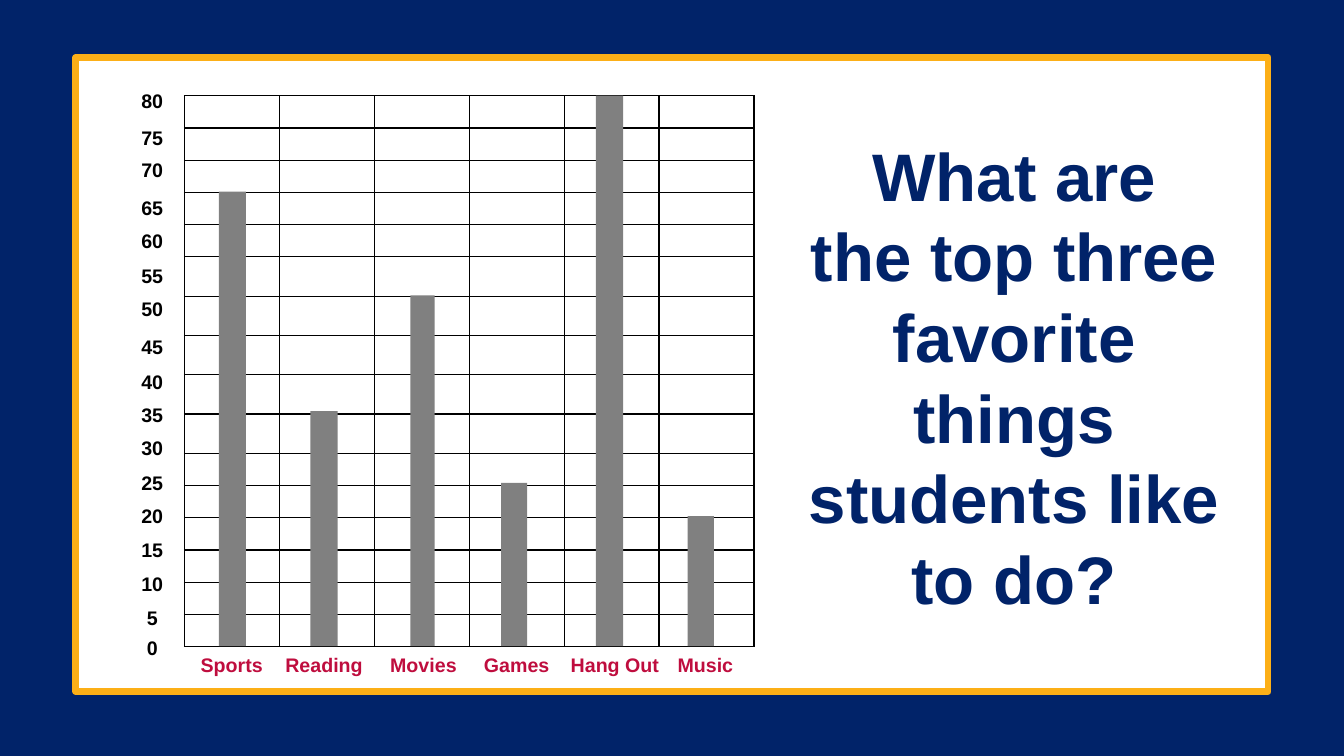
"""Build a slide with a survey bar graph and a question about it."""
from pptx import Presentation
from pptx.dml.color import RGBColor
from pptx.enum.shapes import MSO_SHAPE
from pptx.enum.text import MSO_ANCHOR, MSO_AUTO_SIZE, PP_ALIGN
from pptx.oxml.ns import qn
from pptx.util import Inches, Pt
from lxml import etree

RECTANGLE = MSO_SHAPE.RECTANGLE
TOP = MSO_ANCHOR.TOP
NO_AUTOFIT = MSO_AUTO_SIZE.NONE
CENTER = PP_ALIGN.CENTER
NAVY, GOLD, WHITE = "012369", "FCAF17", "FFFFFF"
BLACK, GRAY, CRIMSON = "000000", "808080", "BF0D3E"


def color(hex_string):
    return RGBColor.from_string(hex_string)


def format_text(text_frame, size, font_color, margin):
    text_frame.word_wrap = True
    text_frame.auto_size = NO_AUTOFIT
    text_frame.vertical_anchor = TOP
    text_frame.margin_left = text_frame.margin_right = Inches(margin)
    text_frame.margin_top = text_frame.margin_bottom = Inches(0.04)
    for paragraph in text_frame.paragraphs:
        for run in paragraph.runs:
            run.font.name = "Arial"
            run.font.size = Pt(size)
            run.font.bold = True
            run.font.color.rgb = color(font_color)


presentation = Presentation()
presentation.slide_width = Inches(13.33)
presentation.slide_height = Inches(7.5)
slide = presentation.slides.add_slide(presentation.slide_layouts[5])
slide.background.fill.solid()
slide.background.fill.fore_color.rgb = color(NAVY)
shapes = slide.shapes
question = shapes.title

panel = shapes.add_shape(RECTANGLE, Inches(0.75), Inches(0.57), Inches(11.83), Inches(6.29))
panel.shadow.inherit = False
panel.fill.solid()
panel.fill.fore_color.rgb = color(WHITE)
panel.line.color.rgb = color(GOLD)
panel.line.width = Pt(4.5)
shapes._spTree.remove(question._element)
shapes._spTree.append(question._element)

row_heights = [0.32] * 5 + [0.39] * 5 + [0.32] * 6
grid_frame = shapes.add_table(
    len(row_heights), 6, Inches(1.83), Inches(0.95), Inches(5.65), Inches(5.46))
grid = grid_frame.table
grid.first_row = False
grid.horz_banding = False
for row, height in zip(grid.rows, row_heights):
    row.height = Inches(height)
    for cell in row.cells:
        cell.margin_left = cell.margin_right = 0
        cell.margin_top = cell.margin_bottom = 0
        properties = cell._tc.get_or_add_tcPr()
        for side in ("a:lnL", "a:lnR", "a:lnT", "a:lnB"):
            border = etree.SubElement(properties, qn(side), w=str(Pt(1)))
            border_fill = etree.SubElement(border, qn("a:solidFill"))
            etree.SubElement(border_fill, qn("a:srgbClr"), val=BLACK)
        cell.fill.background()

baseline = 6.41
bars = [
    (2.17, 0.27, 4.51),
    (3.08, 0.27, 2.33),
    (4.07, 0.24, 3.48),
    (4.97, 0.26, 1.62),
    (5.91, 0.27, 5.46),
    (6.82, 0.26, 1.29),
]
for left, width, height in bars:
    bar = shapes.add_shape(
        RECTANGLE, Inches(left), Inches(baseline - height), Inches(width), Inches(height))
    bar.shadow.inherit = False
    bar.fill.solid()
    bar.fill.fore_color.rgb = color(GRAY)
    bar.line.fill.background()

scale = shapes.add_textbox(Inches(1.35), Inches(0.84), Inches(0.32), Inches(6.11))
scale.text_frame.text = "\n".join(str(value) for value in range(80, -1, -5))
format_text(scale.text_frame, 14, BLACK, 0.04)
label_gaps = [0, 10, 6, 10, 7, 8, 7, 10, 8, 7, 7, 8, 7, 7, 8, 7, 5]
for paragraph, gap in zip(scale.text_frame.paragraphs, label_gaps):
    paragraph.alignment = CENTER
    paragraph.space_before = Pt(gap)

activities = ["Sports", "Reading", "Movies", "Games", "Hang Out", "Music"]
tab_positions = [0.27, 1.11, 2.15, 3.08, 3.94, 5]
categories = shapes.add_textbox(Inches(1.68), Inches(6.42), Inches(6.2), Inches(0.24))
categories.text_frame.text = "".join("\t" + activity for activity in activities)
format_text(categories.text_frame, 14, CRIMSON, 0.04)
paragraph = categories.text_frame.paragraphs[0]
paragraph.line_spacing = 1.07
tab_list = etree.SubElement(paragraph._p.get_or_add_pPr(), qn("a:tabLst"))
for position in tab_positions:
    etree.SubElement(tab_list, qn("a:tab"), pos=str(Inches(position)), algn="l")

question.left, question.top = Inches(7.82), Inches(1.29)
question.width, question.height = Inches(4.48), Inches(5.23)
question.text_frame.text = "What are\vthe top three favorite things students like to do?"
format_text(question.text_frame, 48, NAVY, 0.1)
question.text_frame.paragraphs[0].alignment = CENTER

presentation.save("out.pptx")
